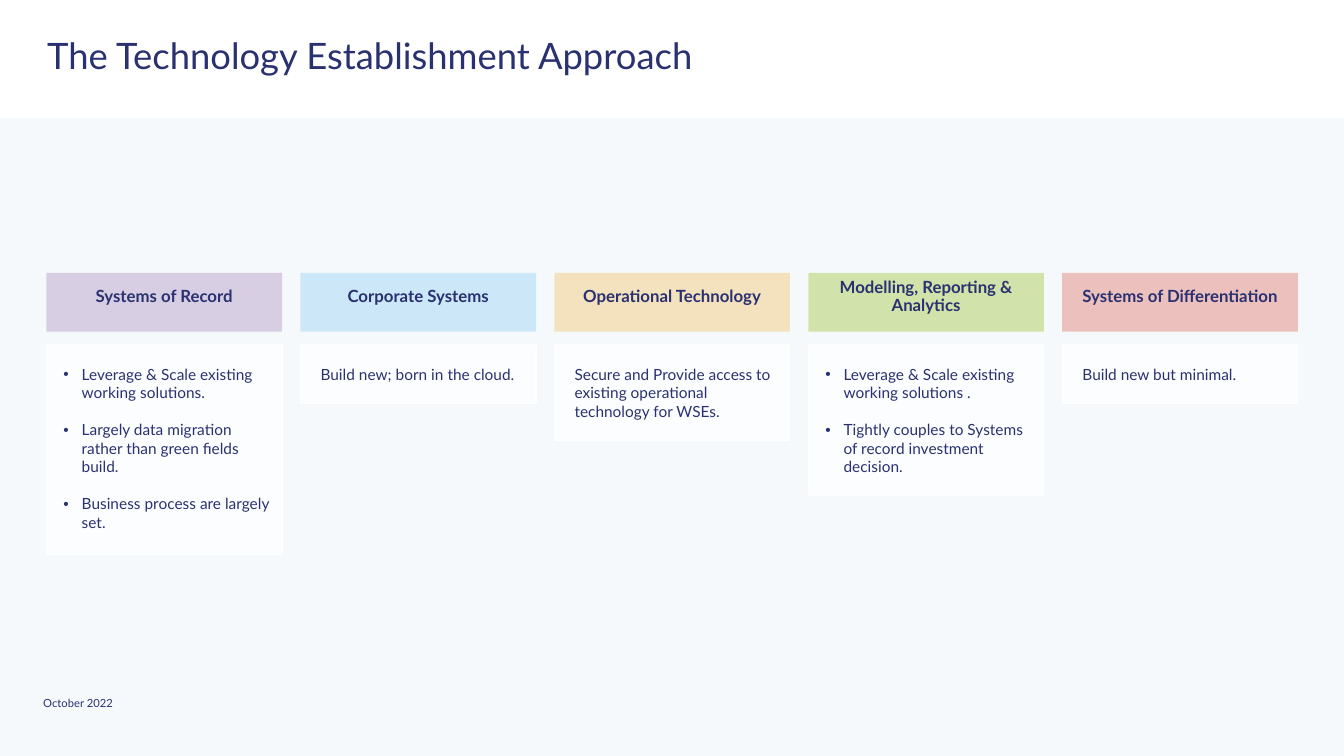
from lxml import etree
from pptx import Presentation
from pptx import util as u
from pptx.dml import color as col
from pptx.enum import shapes, text
from pptx.oxml import ns

HEX = {"page": "F6F9FB", "white": "FFFFFF", "ink": "293171", "plum": "9B75B3",
       "sky": "83C8F0", "gold": "F1A31B", "leaf": "86B600", "red": "D53D2B"}
FONT = "Lato"
PITCH, WIDTH = 6.4, 5.94
COLUMNS = [
    ("Systems of Record", "plum", 32, 5.28, True,
     ["Leverage & Scale existing working solutions.",
      "Largely data migration rather than green fields build.",
      "Business process are largely set."]),
    ("Corporate Systems", "sky", 36, 1.48, False,
     ["Build new; born in the cloud."]),
    ("Operational Technology", "gold", 27, 2.41, False,
     ["Secure and Provide access to existing operational technology for WSEs."]),
    ("Modelling, Reporting & Analytics", "leaf", 32, 3.81, True,
     ["Leverage & Scale existing working solutions .",
      "Tightly couples to Systems of record investment decision."]),
    ("Systems of Differentiation", "red", 30, 1.48, False,
     ["Build new but minimal."]),
]


def tint(name):
    return col.RGBColor.from_string(HEX[name])


def frame(shape, pads):
    body = shape.text_frame
    body.word_wrap = True
    body.vertical_anchor = text.MSO_ANCHOR.TOP
    (body.margin_left, body.margin_top,
     body.margin_right, body.margin_bottom) = [u.Cm(p) for p in pads]
    return body


def write(para, words, size, bold=False):
    para.text = words
    para.alignment = text.PP_ALIGN.LEFT
    para.font.name = FONT
    para.font.size = u.Pt(size)
    para.font.bold = bold
    para.font.color.rgb = tint("ink")


def block(slide, box, fill, alpha=100):
    shape = slide.shapes.add_shape(
        shapes.MSO_SHAPE.RECTANGLE, *[u.Cm(n) for n in box])
    shape.shadow.inherit = False
    shape.fill.solid()
    shape.fill.fore_color.rgb = tint(fill)
    shape.line.fill.background()
    if alpha < 100:
        clr = shape.fill._xPr.find(".//" + ns.qn("a:srgbClr"))
        etree.SubElement(clr, ns.qn("a:alpha"), val=str(alpha * 1000))
    return shape


def bullet(para):
    props = para._p.get_or_add_pPr()
    props.set("marL", str(u.Cm(0.64)))
    props.set("indent", str(u.Cm(-0.46)))
    clr = etree.SubElement(props, ns.qn("a:buClr"))
    etree.SubElement(clr, ns.qn("a:srgbClr"), val=HEX["ink"])
    etree.SubElement(props, ns.qn("a:buFont"), typeface="Arial")
    etree.SubElement(props, ns.qn("a:buChar"), char="•")


def label(slide, box, words, size, space=1.0):
    shape = slide.shapes.add_textbox(*[u.Cm(n) for n in box])
    para = frame(shape, (0, 0, 0, 0)).paragraphs[0]
    write(para, words, size)
    para.line_spacing = space


def header(slide, box):
    left, top, width, height = box
    block(slide, box, "white")
    label(slide, (left + 1.19, top + 0.97, 20.42, 0.99),
          "The Technology Establishment Approach", 26, 0.9)


def column(slide, left, top, item):
    name, hue, alpha, height, listed, lines = item
    head = block(slide, (left, top, WIDTH, 1.48), hue, alpha)
    body = frame(head, (0, 0, 0, 0.25))
    body.vertical_anchor = text.MSO_ANCHOR.MIDDLE
    para = body.paragraphs[0]
    write(para, name, 12, True)
    para.alignment = text.PP_ALIGN.CENTER
    para.line_spacing = 0.9

    card = block(slide, (left, top + 1.81, WIDTH, height), "white", 77)
    card.line.color.rgb = tint("white")
    card.line.width = u.Pt(0.75)
    body = frame(card, (0.25 if listed else 0.51, 0.51, 0.25, 0.25))
    for i, words in enumerate(lines):
        para = body.add_paragraph() if i else body.paragraphs[0]
        if listed:
            bullet(para)
        write(para, words, 11)
        if i:
            para.space_before = u.Pt(13.2)


def main():
    deck = Presentation()
    deck.slide_width, deck.slide_height = u.Cm(33.87), u.Cm(19.05)
    slide = deck.slides.add_slide(deck.slide_layouts[6])
    slide.background.fill.solid()
    slide.background.fill.fore_color.rgb = tint("page")
    header(slide, (0, 0, 33.87, 2.97))
    for i, item in enumerate(COLUMNS):
        column(slide, 1.17 + i * PITCH, 6.88, item)
    label(slide, (1.09, 17.55, 5.72, 0.33), "October 2022", 8)
    deck.save("out.pptx")


if __name__ == "__main__":
    main()
